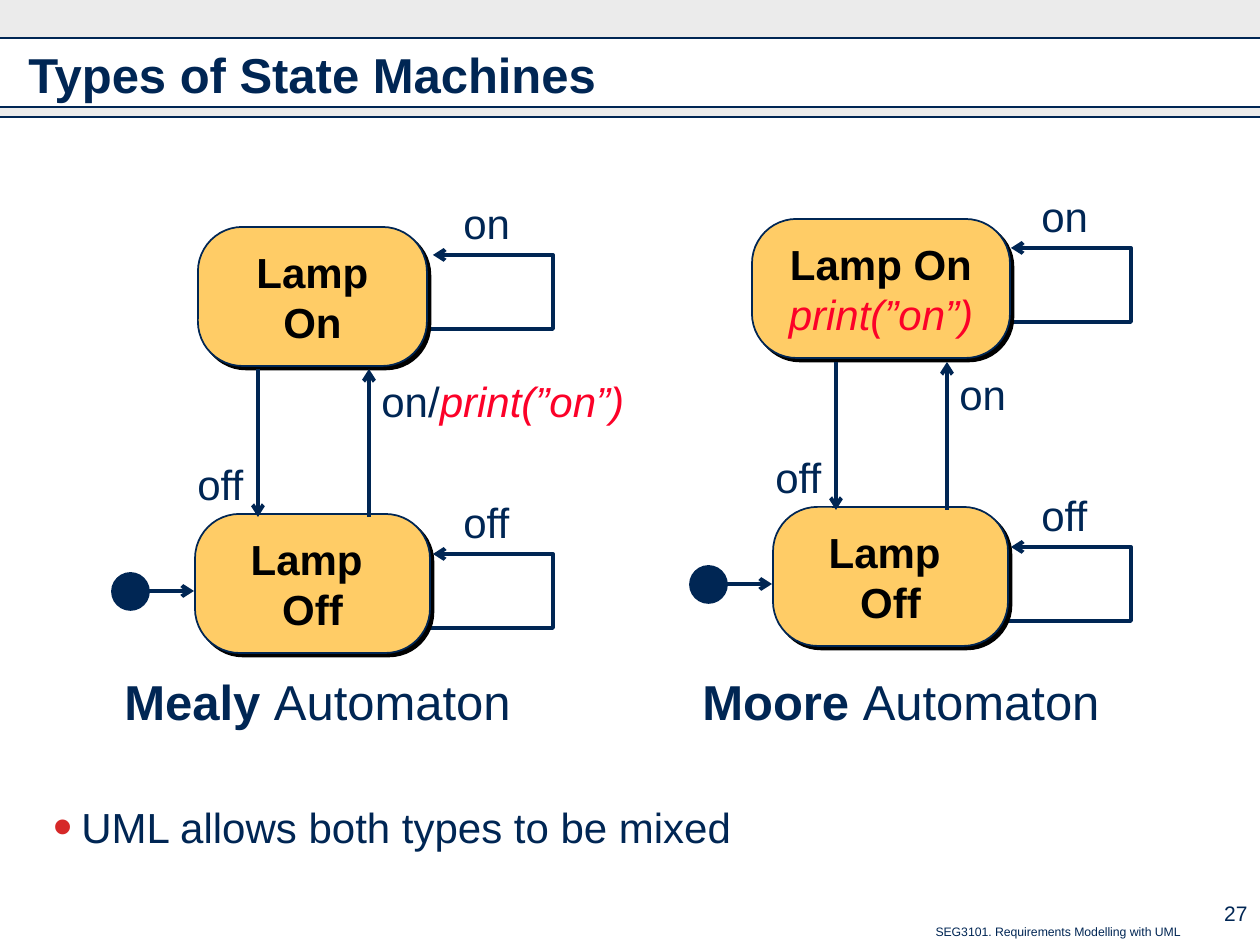
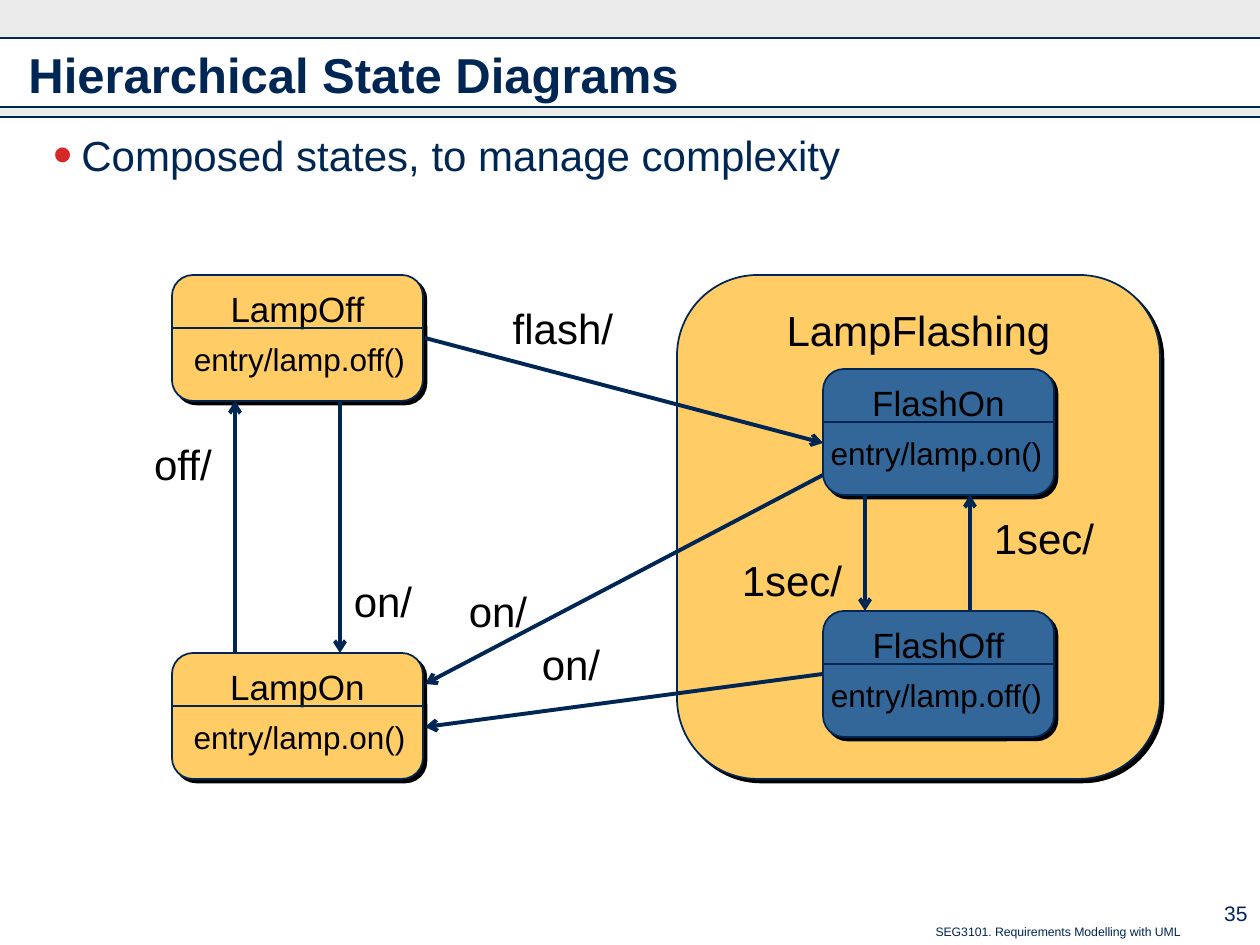
from typing import NamedTuple

from lxml.etree import SubElement as Sub
from pptx import Presentation
from pptx.dml.color import RGBColor as Rgb
from pptx.enum.shapes import MSO_CONNECTOR as Conn, MSO_SHAPE as Kind
from pptx.enum.text import MSO_ANCHOR as Anchor, PP_ALIGN as Align
from pptx.oxml.ns import qn
from pptx.util import Pt

# Shared look
SCALE = 914400 / 126
WIDE, HIGH = 1260, 945
FONT = "Arial"
NAVY, BLACK, GREY = "002654", "000000", "CDCDCD"
GOLD, BLUE, RED, DOT = "FFCC66", "336699", "FC0128", "D62828"


class Run(NamedTuple):
    text: str
    hue: str | None = None
    bold: bool | None = None
    slant: bool = False


class Box(NamedTuple):
    x: int
    y: int
    w: int
    h: int


class Label(NamedTuple):
    text: str
    box: Box


class Auto(NamedTuple):
    """One automaton; dx and dy move its diagram."""
    dx: int
    dy: int
    top: Box
    lines: list
    event: list
    event_w: int
    name: str
    name_w: int


class State(NamedTuple):
    name: str
    entry: str
    box: Box
    fill: str
    shift: int


class Arrow(NamedTuple):
    x1: int
    y1: int
    x2: int
    y2: int


def px(n: int) -> int:
    return round(n * SCALE)


def rgb(code: str) -> Rgb:
    return Rgb.from_string(code)


# Drawing tools
def write(frame, *paras, size=24, hue=BLACK, bold=False, align=Align.LEFT,
          anchor=Anchor.TOP, wrap=False):
    """Fill a frame; each paragraph is a string or a list of runs."""
    frame.word_wrap = wrap
    frame.vertical_anchor = anchor
    for i, runs in enumerate(paras):
        para = frame.add_paragraph() if i else frame.paragraphs[0]
        para.alignment = align
        for part in [Run(runs)] if isinstance(runs, str) else runs:
            for j, line in enumerate(part.text.split("\n")):
                if j:
                    para.add_line_break()
                run = para.add_run()
                run.text = line
                font = run.font
                font.name, font.size = FONT, Pt(size)
                font.bold = bold if part.bold is None else part.bold
                font.italic = part.slant
                font.color.rgb = rgb(part.hue or hue)


def label(slide, box: Box, *paras, **fmt):
    frame = slide.shapes.add_textbox(*map(px, box)).text_frame
    write(frame, *paras, **fmt)
    return frame


def shape(slide, kind, box: Box, fill: str, edge: str | None = NAVY):
    item = slide.shapes.add_shape(kind, *map(px, box))
    item.shadow.inherit = False
    item.fill.solid()
    item.fill.fore_color.rgb = rgb(fill)
    if edge:
        item.line.color.rgb = rgb(edge)
        item.line.width = Pt(1)
    else:
        item.line.fill.background()
    return item


def rounded(slide, box: Box, fill: str, curve: float):
    """Rounded box with a hard black shadow."""
    item = shape(slide, Kind.ROUNDED_RECTANGLE, box, fill)
    item.adjustments[0] = curve
    effect = item._element.spPr.find(qn("a:effectLst"))
    cast = Sub(effect, qn("a:outerShdw"), dist=str(Pt(2.8)), dir="2700000",
               algn="ctr", rotWithShape="0")
    Sub(cast, qn("a:srgbClr"), val=BLACK)
    return item


def stroke(item, width: float, head: bool):
    item.line.color.rgb = rgb(NAVY)
    item.line.width = Pt(width)
    if head:
        edge = item._element.spPr.find(qn("a:ln"))
        Sub(edge, qn("a:tailEnd"), type="arrow")


def line(slide, ends: Arrow, width=2.25, head=True):
    item = slide.shapes.add_connector(Conn.STRAIGHT, *map(px, ends))
    stroke(item, width, head)
    Sub(item._element.spPr, qn("a:effectLst"))


def loop(slide, x: int, y: int):
    """Self transition whose tip is 18 px right of x, at height y."""
    pen = slide.shapes.build_freeform(px(x), px(y + 74), scale=1.0)
    ends = [(x + 138, y + 74), (x + 138, y), (x + 18, y)]
    pen.add_line_segments([(px(a), px(b)) for a, b in ends], close=False)
    item = pen.convert_to_shape()
    item.shadow.inherit = False
    item.fill.background()
    stroke(item, 2.25, True)


# Slide frame
def base(deck, title: str, number: int):
    slide = deck.slides.add_slide(deck.slide_layouts[6])
    for y, h in ((0, 38), (107, 9)):
        band = shape(slide, Kind.RECTANGLE, Box(0, y, WIDE, h), GREY, None)
        tint = band._element.spPr.find(".//" + qn("a:srgbClr"))
        Sub(tint, qn("a:alpha"), val="40000")
    for y in (38, 107, 117):
        line(slide, Arrow(0, y, WIDE, y), 0.75, False)
    label(slide, Box(411, 918, 782, 28),
          "SEG3101. Requirements Modelling with UML",
          size=7, hue=NAVY, align=Align.RIGHT, wrap=True)
    label(slide, Box(1172, 892, 88, 43), str(number), size=12, hue=NAVY,
          align=Align.RIGHT, anchor=Anchor.MIDDLE, wrap=True)
    label(slide, Box(16, 32, 1228, 83), title, size=28, hue=NAVY,
          bold=True, anchor=Anchor.MIDDLE, wrap=True)
    return slide


def bullet(slide, y: int, text: str):
    frame = label(slide, Box(16, y, 1228, 60), text, hue=NAVY, wrap=True)
    para = frame.paragraphs[0]
    props = para._p.get_or_add_pPr()
    props.set("marL", str(px(53)))
    props.set("indent", str(px(-28)))
    Sub(Sub(props, qn("a:buClr")), qn("a:srgbClr"), val=DOT)
    Sub(props, qn("a:buSzPct"), val="130000")
    Sub(props, qn("a:buFont"), typeface=FONT)
    Sub(props, qn("a:buChar"), char="•")
    para.line_spacing = Pt(26)


# Slide 1: two automata
PRINT = Run("print(”on”)", RED, False, True)
AUTOS = [
    Auto(578, -7, Box(752, 219, 258, 139), ["Lamp On", [PRINT]],
         [Run("on")], 72, "Moore ", 423),
    Auto(0, 0, Box(198, 227, 229, 139), ["Lamp On"],
         [Run("on/"), PRINT], 268, "Mealy ", 413),
]


def automaton(slide, auto: Auto):
    dx, dy = auto.dx, auto.dy

    def tag(x: int, y: int, text, w: int = 72):
        label(slide, Box(x + dx, y + dy, w, 63), text, hue=NAVY)

    def arrow(x1: int, y1: int, x2: int, y2: int):
        line(slide, Arrow(x1 + dx, y1 + dy, x2 + dx, y2 + dy))

    for y, text in ((255, "on"), (554, "off")):
        loop(slide, 415 + dx, y + dy)
        tag(451, y - 64, text)
    low = Box(195 + dx, 514 + dy, 235, 139)
    for box, paras in ((auto.top, auto.lines), (low, ["Lamp \nOff"])):
        write(rounded(slide, box, GOLD, 0.32).text_frame, *paras, bold=True,
              align=Align.CENTER, anchor=Anchor.MIDDLE, wrap=True)
    arrow(258, 369, 258, 517)
    tag(185, 452, "off")
    tag(369, 369, auto.event, auto.event_w)
    arrow(369, 517, 369, 369)
    arrow(130, 591, 194, 591)
    shape(slide, Kind.OVAL, Box(112 + dx, 573 + dy, 37, 37), NAVY)
    label(slide, Box(112 + dx, 665, auto.name_w, 72),
          [Run(auto.name, bold=True), Run("Automaton")], size=28, hue=NAVY)


# Slide 2: nested states
STATES = [
    State("FlashOff", "entry/lamp.off()", Box(823, 611, 231, 126), BLUE, -5),
    State("FlashOn", "entry/lamp.on()", Box(823, 369, 231, 126), BLUE, -5),
    State("LampOff", "entry/lamp.off()", Box(172, 275, 251, 126), GOLD, 9),
    State("LampOn", "entry/lamp.on()", Box(172, 653, 251, 126), GOLD, 9),
]
ARROWS = [
    Arrow(425, 338, 823, 443), Arrow(865, 495, 865, 611),
    Arrow(970, 611, 970, 495), Arrow(235, 653, 235, 401),
    Arrow(340, 401, 340, 653), Arrow(823, 674, 425, 727),
    Arrow(823, 475, 425, 684),
]
LABELS = [
    Label("flash/", Box(493, 296, 140, 63)),
    Label("1sec/", Box(722, 548, 140, 63)),
    Label("1sec/", Box(974, 506, 140, 63)),
    Label("off/", Box(133, 432, 100, 63)),
    Label("on/", Box(333, 569, 100, 63)),
    Label("on/", Box(521, 632, 100, 63)),
    Label("on/", Box(448, 579, 100, 63)),
]


def state(slide, item: State):
    x, y, w, _ = item.box
    body = rounded(slide, item.box, item.fill, 0.167)
    write(body.text_frame, item.name, size=20, align=Align.CENTER)
    line(slide, Arrow(x, y + 53, x + w, y + 53), 1.5, False)
    label(slide, Box(x + item.shift, y + 58, 237, 51), item.entry, size=18,
          align=Align.CENTER, anchor=Anchor.MIDDLE)


def main():
    deck = Presentation()
    deck.slide_width, deck.slide_height = px(WIDE), px(HIGH)

    slide = base(deck, "Types of State Machines", 27)
    bullet(slide, 800, "UML allows both types to be mixed")
    for auto in AUTOS:
        automaton(slide, auto)

    slide = base(deck, "Hierarchical State Diagrams", 35)
    bullet(slide, 128, "Composed states, to manage complexity")
    outer = rounded(slide, Box(677, 275, 483, 504), GOLD, 0.167)
    write(outer.text_frame, "LampFlashing", align=Align.CENTER)
    for item in STATES:
        state(slide, item)
    for ends in ARROWS:
        line(slide, ends)
    for text, box in LABELS:
        label(slide, box, text, align=Align.CENTER, anchor=Anchor.MIDDLE)

    deck.save("out.pptx")


if __name__ == "__main__":
    main()
